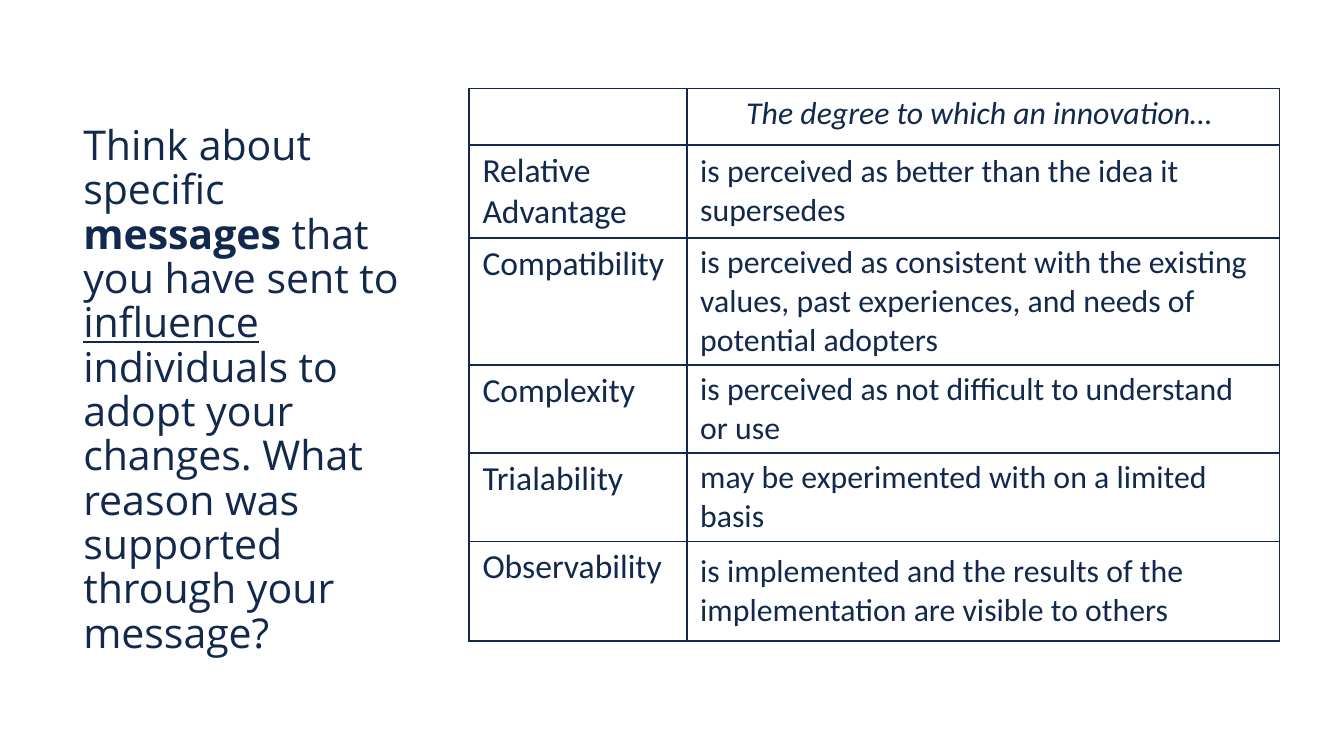
"""Build a slide with a reflection question beside a table of innovation attributes."""
from lxml.etree import SubElement
from pptx import Presentation
from pptx.dml.color import RGBColor
from pptx.enum.text import MSO_ANCHOR as Anchor, MSO_AUTO_SIZE as AutoSize, PP_ALIGN as Align
from pptx.oxml.ns import qn
from pptx.util import Inches, Pt

NAVY = RGBColor(0x12, 0x28, 0x4C)
WHITE = RGBColor(0xFF, 0xFF, 0xFF)
SLIDE_SIZE = (10, 10 * 9 / 16)
TITLE_BOX = (0.36, 2.04, 2.73, 2.89)
TABLE_CORNER = (3.49, 0.66)
COLUMN_WIDTHS = (1.62, 4.41)
ROW_HEIGHTS = (0.42, 0.69, 0.94, 0.65, 0.65, 0.74)
OUTER_LINE, INNER_LINE = 0.75, 1

QUESTION = [
    ("Think about specific ", {}),
    ("messages ", {"bold": True}),
    ("that you have sent to ", {}),
    ("influence", {"underline": True}),
    (" individuals to adopt your changes. What reason was supported through your message?", {}),
]
ROWS = [
    ("", "The degree to which an innovation… "),
    ("Relative Advantage", "is perceived as better than the idea it supersedes"),
    ("Compatibility", "is perceived as consistent with the existing values, "
                      "past experiences, and needs of potential adopters"),
    ("Complexity", "is perceived as not difficult to understand or use"),
    ("Trialability", "may be experimented with on a limited basis"),
    ("Observability", "is implemented and the results of the implementation are visible to others"),
]
TITLE_FONT = {"name": "Open Sans", "size": Pt(22), "bold": False}
TERM_FONT = {"name": "Calibri", "size": Pt(18), "bold": False}
MEANING_FONT = {**TERM_FONT, "size": Pt(17)}
HEADER_FONT = {**MEANING_FONT, "italic": True}


def set_all(target, values):
    for name, value in values.items():
        setattr(target, name, value)


def set_margins(target, side):
    set_all(target, {"margin_left": Inches(side), "margin_right": Inches(side),
                     "margin_top": Inches(0.04), "margin_bottom": Inches(0.04)})


def add_span(para, text, font):
    span = para.add_run()
    span.text = text
    set_all(span.font, font)
    span.font.color.rgb = NAVY


def add_borders(cell, widths):
    properties = cell._tc.get_or_add_tcPr()
    for position, (side, width) in enumerate(zip("LRTB", widths)):
        line = properties.makeelement(qn(f"a:ln{side}"), {"w": str(Pt(width))})
        fill = SubElement(line, qn("a:solidFill"))
        SubElement(fill, qn("a:srgbClr"), val=str(NAVY))
        properties.insert(position, line)


def add_question(page):
    title = page.shapes.title
    set_all(title, dict(zip(("left", "top", "width", "height"), map(Inches, TITLE_BOX))))
    frame = title.text_frame
    set_all(frame, {"word_wrap": True, "auto_size": AutoSize.NONE,
                    "vertical_anchor": Anchor.BOTTOM})
    set_margins(frame, 0.07)
    para = frame.paragraphs[0]
    set_all(para, {"alignment": Align.LEFT, "line_spacing": 0.9})
    para._p.get_or_add_pPr().set("marL", str(Inches(0.19)))
    for text, style in QUESTION:
        add_span(para, text, {**TITLE_FONT, **style})


def add_attributes(page):
    size = (sum(COLUMN_WIDTHS), sum(ROW_HEIGHTS))
    table = page.shapes.add_table(len(ROWS), len(COLUMN_WIDTHS),
                                  *map(Inches, TABLE_CORNER + size)).table
    set_all(table, {"first_row": False, "horz_banding": False})
    for column, width in zip(table.columns, COLUMN_WIDTHS):
        column.width = Inches(width)
    last_row, last_column = len(ROWS) - 1, len(COLUMN_WIDTHS) - 1
    for r, texts in enumerate(ROWS):
        table.rows[r].height = Inches(ROW_HEIGHTS[r])
        for c, text in enumerate(texts):
            cell = table.cell(r, c)
            cell.fill.solid()
            cell.fill.fore_color.rgb = WHITE
            set_margins(cell, 0.1)
            cell.vertical_anchor = Anchor.MIDDLE if r and c else Anchor.TOP
            edges = (c == 0, c == last_column, r == 0, r == last_row)
            add_borders(cell, [OUTER_LINE if edge else INNER_LINE for edge in edges])
            para = cell.text_frame.paragraphs[0]
            para.alignment = Align.LEFT if r else Align.CENTER
            if text:
                font = TERM_FONT if c == 0 else MEANING_FONT if r else HEADER_FONT
                add_span(para, text, font)


def main():
    deck = Presentation()
    deck.slide_width, deck.slide_height = map(Inches, SLIDE_SIZE)
    page = deck.slides.add_slide(deck.slide_layouts[5])
    add_question(page)
    add_attributes(page)
    deck.save("out.pptx")


if __name__ == "__main__":
    main()
